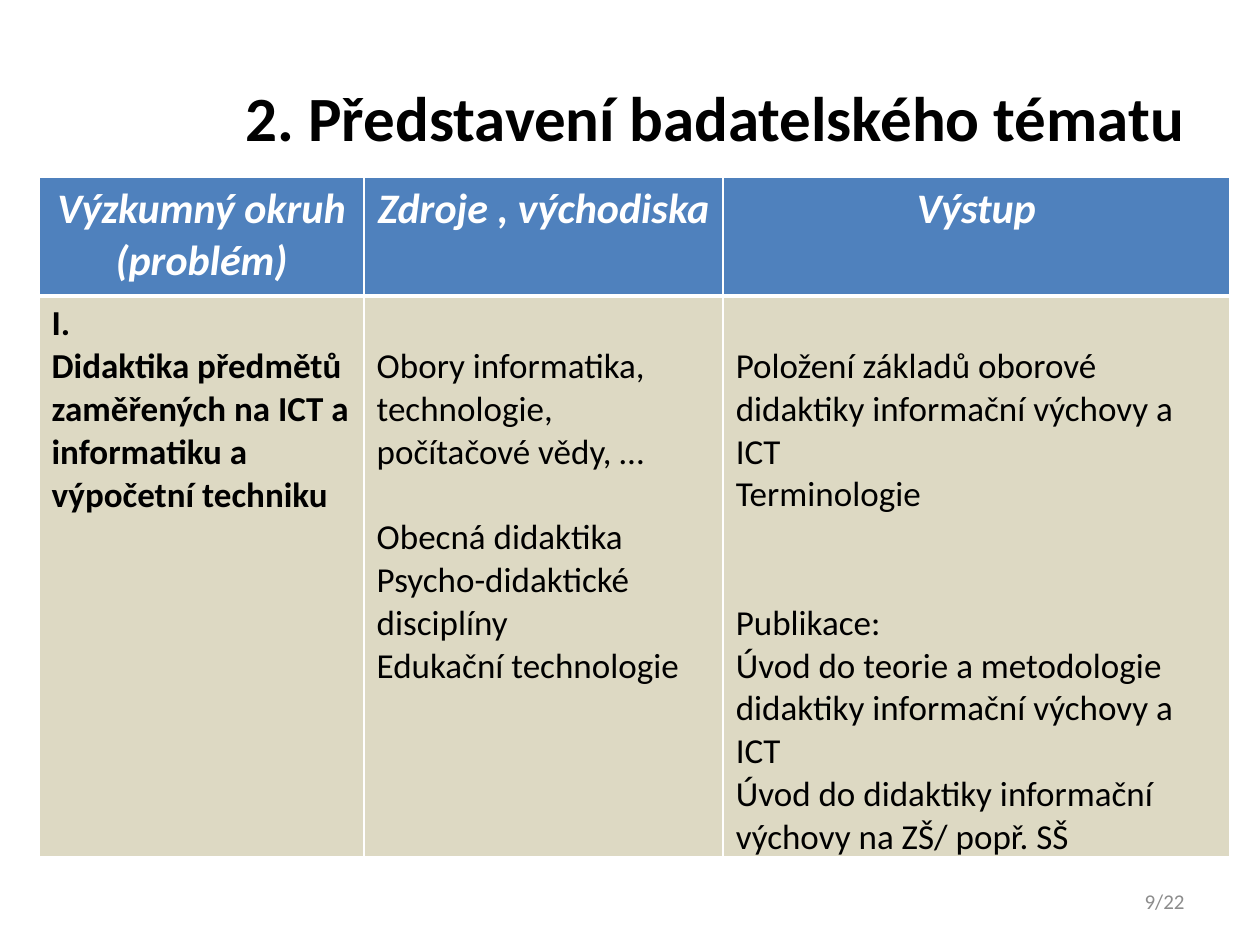
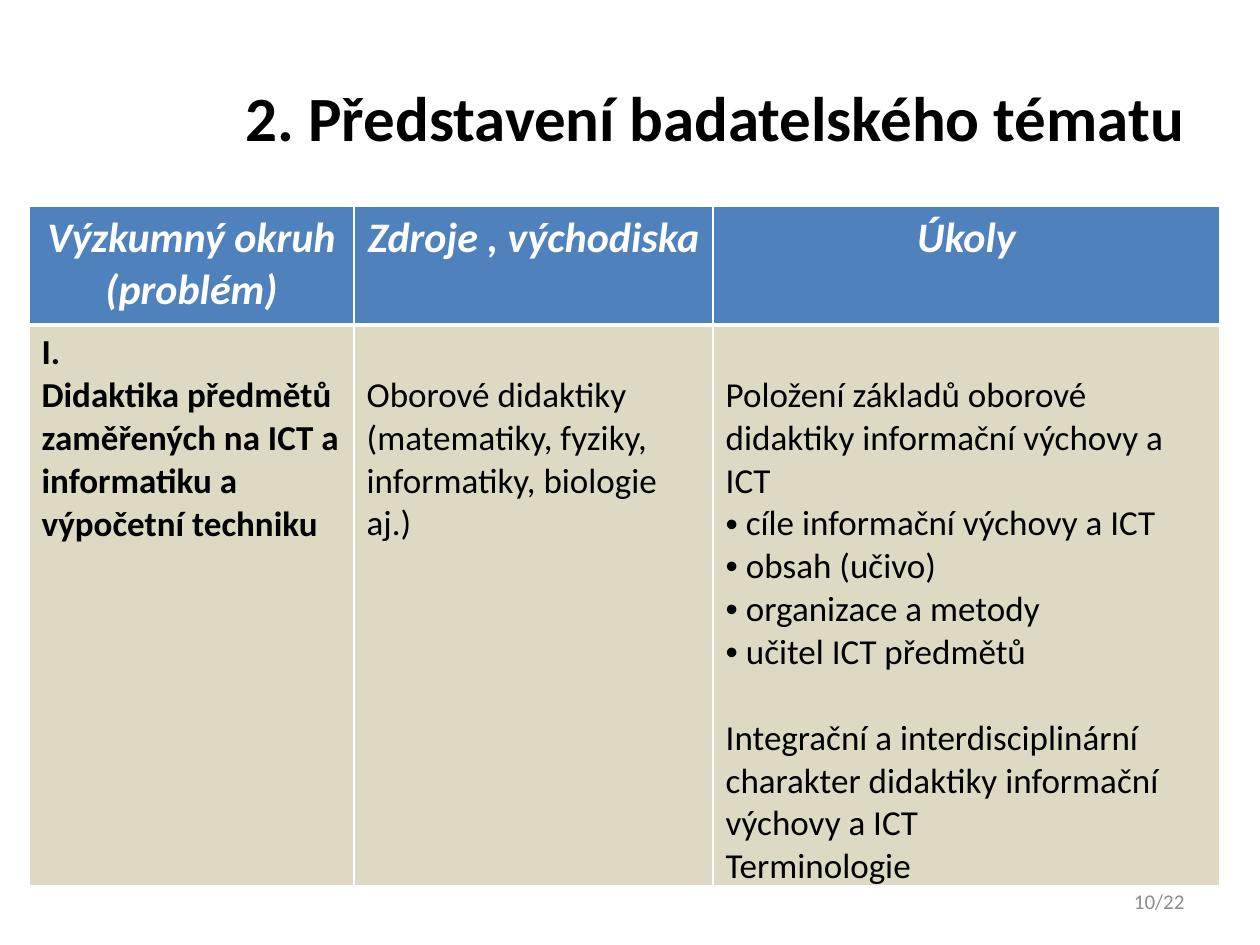
from dataclasses import dataclass
from pptx import Presentation
from pptx.dml.color import RGBColor as Rgb
from pptx.enum.text import MSO_ANCHOR as Anchor, PP_ALIGN as Align
from pptx.oxml.ns import qn
from pptx.util import Emu, Inches, Pt
from lxml.etree import SubElement, Element

COLORS = {"ink": "000000", "paper": "FFFFFF", "header": "4F81BD",
          "body": "DDD9C3", "number": "8C8C8C"}
FONT = "Calibri"
WIDTH, HEIGHT = Inches(10), Inches(7.5)
GRID_COLUMNS, GRID_ROWS = 100, 75
COLUMN_SPANS = (25.8, 28.5, 40.2)
ROW_SPANS = (9.4, 44.3)
LINE = Pt(24.4)
CELL_INSET = Inches(0.05)
BULLET_INDENT = Inches(0.16)
TITLE = "2. Představení badatelského tématu"
PAGE_COUNT = 22


@dataclass(frozen=True)
class Style:
    size: int
    color: str
    align: Align
    bold: bool = False
    italic: bool = False


@dataclass(frozen=True)
class Area:
    column: float
    row: float
    columns: float
    rows: float

    def box(self) -> tuple:
        return (across(self.column), down(self.row),
                across(self.columns), down(self.rows))


@dataclass(frozen=True)
class Entry:
    text: str
    gap_lines: int = 0
    bullet: bool = False


@dataclass(frozen=True)
class Topic:
    page: int
    column: float
    row: float
    outcome_heading: str
    sources: tuple
    outcomes: tuple


STYLES = {
    "title": Style(36, "ink", Align.RIGHT, bold=True),
    "number": Style(12, "number", Align.RIGHT),
    "heading": Style(24, "paper", Align.CENTER, bold=True, italic=True),
    "problem": Style(20, "ink", Align.LEFT, bold=True),
    "detail": Style(20, "ink", Align.LEFT),
}
TITLE_AREA = Area(5, 3, 90, 12.5)
NUMBER_AREA = Area(71.7, 69.5, 23.3, 4)
PROBLEM = (
    Entry("I."),
    Entry("Didaktika předmětů zaměřených na ICT a informatiku a výpočetní techniku"),
)
FOUNDATIONS = Entry("Položení základů oborové didaktiky informační výchovy a ICT", 1)
TOPICS = (
    Topic(9, 3.1, 14.1, "Výstup", (
        Entry("Obory informatika, technologie, počítačové vědy, …", 1),
        Entry("Obecná didaktika", 1),
        Entry("Psycho-didaktické disciplíny"),
        Entry("Edukační technologie"),
    ), (
        FOUNDATIONS,
        Entry("Terminologie"),
        Entry("Publikace:", 2),
        Entry("Úvod do teorie a metodologie didaktiky informační výchovy a ICT"),
        Entry("Úvod do didaktiky informační výchovy na ZŠ/ popř. SŠ"),
    )),
    Topic(10, 2.3, 16.4, "Úkoly", (
        Entry("Oborové didaktiky (matematiky, fyziky, informatiky, biologie aj.)", 1),
    ), (
        FOUNDATIONS,
        Entry("cíle informační výchovy a ICT", bullet=True),
        Entry("obsah (učivo)", bullet=True),
        Entry("organizace a metody", bullet=True),
        Entry("učitel ICT předmětů", bullet=True),
        Entry("Integrační a interdisciplinární charakter didaktiky informační výchovy a ICT", 1),
        Entry("Terminologie"),
    )),
)


def across(columns: float) -> Emu:
    return Emu(round(WIDTH * columns / GRID_COLUMNS))


def down(rows: float) -> Emu:
    return Emu(round(HEIGHT * rows / GRID_ROWS))


def apply(target, values: dict) -> None:
    for attribute, value in values.items():
        setattr(target, attribute, value)


def add_bullet(paragraph) -> None:
    properties = paragraph._p.get_or_add_pPr()
    properties.set("marL", str(BULLET_INDENT))
    properties.set("indent", str(-BULLET_INDENT))
    SubElement(properties, qn("a:buFont"), typeface="Arial")
    SubElement(properties, qn("a:buChar"), char="•")


def write(frame, entries: tuple, style: Style) -> None:
    for index, entry in enumerate(entries):
        paragraph = frame.paragraphs[0] if index == 0 else frame.add_paragraph()
        gap = entry.gap_lines * LINE if index else 0
        apply(paragraph, {"alignment": style.align, "space_before": Emu(gap)})
        if entry.bullet:
            add_bullet(paragraph)
        run = paragraph.add_run()
        run.text = entry.text
        apply(run.font, {"name": FONT, "size": Pt(style.size),
                         "bold": style.bold, "italic": style.italic})
        run.font.color.rgb = Rgb.from_string(COLORS[style.color])


def add_label(slide, area: Area, text: str, style: Style) -> None:
    frame = slide.shapes.add_textbox(*area.box()).text_frame
    apply(frame, {"word_wrap": True, "vertical_anchor": Anchor.MIDDLE})
    write(frame, (Entry(text),), style)


def add_borders(cell, top: int, bottom: int) -> None:
    widths = {"a:lnL": 1, "a:lnR": 1, "a:lnT": top, "a:lnB": bottom}
    properties = cell._tc.get_or_add_tcPr()
    for position, (side, width) in enumerate(widths.items()):
        border = Element(qn(side), w=str(Pt(width)))
        fill = SubElement(border, qn("a:solidFill"))
        SubElement(fill, qn("a:srgbClr"), val=COLORS["paper"])
        properties.insert(position, border)


def fill_cell(cell, entries: tuple, style: Style, is_header: bool) -> None:
    cell.margin_top = Emu(CELL_INSET + entries[0].gap_lines * LINE)
    cell.fill.solid()
    cell.fill.fore_color.rgb = Rgb.from_string(COLORS["header" if is_header else "body"])
    add_borders(cell, *((1, 3) if is_header else (3, 1)))
    write(cell.text_frame, entries, style)


def add_research_table(slide, topic: Topic) -> None:
    area = Area(topic.column, topic.row, sum(COLUMN_SPANS), sum(ROW_SPANS))
    table = slide.shapes.add_table(len(ROW_SPANS), len(COLUMN_SPANS), *area.box()).table
    apply(table, {"first_row": False, "horz_banding": False})
    for column, span in zip(table.columns, COLUMN_SPANS):
        column.width = across(span)
    for row, span in zip(table.rows, ROW_SPANS):
        row.height = down(span)
    headings = ("Výzkumný okruh (problém)", "Zdroje , východiska", topic.outcome_heading)
    contents = (PROBLEM, topic.sources, topic.outcomes)
    for index, (heading, entries) in enumerate(zip(headings, contents)):
        fill_cell(table.cell(0, index), (Entry(heading),), STYLES["heading"], True)
        style = STYLES["detail" if index else "problem"]
        fill_cell(table.cell(1, index), entries, style, False)


def main() -> None:
    deck = Presentation()
    apply(deck, {"slide_width": WIDTH, "slide_height": HEIGHT})
    for topic in TOPICS:
        slide = deck.slides.add_slide(deck.slide_layouts[6])
        add_label(slide, TITLE_AREA, TITLE, STYLES["title"])
        add_research_table(slide, topic)
        add_label(slide, NUMBER_AREA, f"{topic.page}/{PAGE_COUNT}", STYLES["number"])
    deck.save("out.pptx")


if __name__ == "__main__":
    main()
